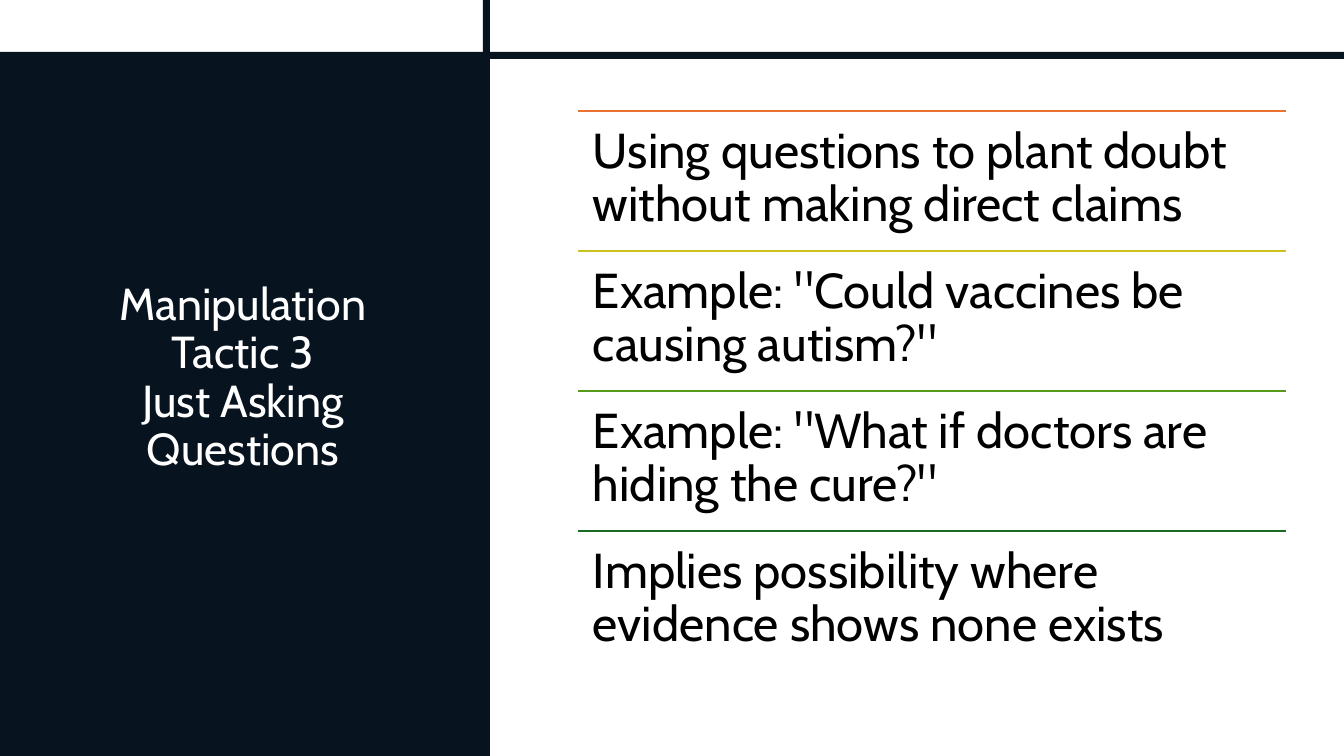
from pptx import Presentation
from pptx.dml.color import RGBColor
from pptx.enum.shapes import MSO_CONNECTOR, MSO_SHAPE
from pptx.enum.text import MSO_ANCHOR, MSO_AUTO_SIZE, PP_ALIGN
from pptx.oxml.ns import qn
from pptx.util import Pt
from lxml.etree import SubElement

SLIDE_WIDTH, SLIDE_HEIGHT = 1344, 756
EMU_PER_PX = 12192000 / SLIDE_WIDTH
TITLE_ONLY = 5

COLORS = {
    "navy": "071420", "white": "FFFFFF", "black": "000000",
    "orange": "E97132", "mustard": "CBC11E", "leaf": "56991D", "forest": "196B24",
}

TITLE_LINES = ["Manipulation Tactic 3", "Just Asking Questions"]
POINTS = [
    ("orange", "Using questions to plant doubt without making direct claims"),
    ("mustard", 'Example: "Could vaccines be causing autism?"'),
    ("leaf", 'Example: "What if doctors are hiding the cure?"'),
    ("forest", "Implies possibility where evidence shows none exists"),
]


def px(*lengths):
    return [round(length * EMU_PER_PX) for length in lengths]


def color(name):
    return RGBColor.from_string(COLORS[name])


def apply(target, **values):
    for attribute, value in values.items():
        setattr(target, attribute, value)


class TacticSlide:
    FONT = "Cabin"
    LINE_SPACING = 0.9

    def __init__(self, slide):
        self.slide = slide
        self.shapes = slide.shapes

    def fill_text(self, frame, lines, size, ink, align, **frame_format):
        apply(frame, word_wrap=True, auto_size=MSO_AUTO_SIZE.NONE, **frame_format)
        paragraph = frame.paragraphs[0]
        apply(paragraph, alignment=align, line_spacing=self.LINE_SPACING)
        for index, line in enumerate(lines):
            if index:
                paragraph.add_line_break()
            run = paragraph.add_run()
            run.text = line
            apply(run.font, name=self.FONT, size=Pt(size))
            run.font.color.rgb = color(ink)

    def block(self, left, top, width, height, fill):
        block = self.shapes.add_shape(MSO_SHAPE.RECTANGLE, *px(left, top, width, height))
        block.shadow.inherit = False
        block.fill.solid()
        block.fill.fore_color.rgb = color(fill)
        block.line.fill.background()

    def title(self, left, top, width, height, lines):
        """Place the title placeholder above everything drawn so far."""
        title = self.shapes.title
        title._element.getparent().append(title._element)
        box = dict(zip(("left", "top", "width", "height"), px(left, top, width, height)))
        apply(title, **box)
        self.fill_text(title.text_frame, lines, 32, "white", PP_ALIGN.CENTER,
                       vertical_anchor=MSO_ANCHOR.MIDDLE)

    def rule(self, left, top, width, stroke):
        rule = self.shapes.add_connector(
            MSO_CONNECTOR.STRAIGHT, *px(left, top, left + width, top))
        rule.line.color.rgb = color(stroke)
        rule.line.width = Pt(1.5)
        SubElement(rule._element.spPr, qn("a:effectLst"))

    def point(self, left, top, width, height, text):
        point = self.shapes.add_textbox(*px(left, top, width, height))
        inset, = px(15)
        margins = {f"margin_{side}": inset for side in ("left", "right", "top", "bottom")}
        self.fill_text(point.text_frame, [text], 35, "black", PP_ALIGN.LEFT,
                       vertical_anchor=MSO_ANCHOR.TOP, **margins)


def main():
    deck = Presentation()
    deck.slide_width, deck.slide_height = px(SLIDE_WIDTH, SLIDE_HEIGHT)
    tactic = TacticSlide(deck.slides.add_slide(deck.slide_layouts[TITLE_ONLY]))

    panel_width, bar, bar_top = 490, 7, 52
    panel_top = bar_top + bar
    tactic.block(0, panel_top, panel_width, SLIDE_HEIGHT - panel_top, "navy")
    tactic.title(66, 85, 354, 587, TITLE_LINES)
    tactic.block(panel_width - bar, 0, bar, SLIDE_HEIGHT, "navy")
    tactic.block(0, bar_top, SLIDE_WIDTH, bar, "navy")

    left, first_top, width, pitch = 578, 111, 708, 140
    for row, (stroke, text) in enumerate(POINTS):
        top = first_top + row * pitch
        tactic.rule(left, top, width, stroke)
        tactic.point(left, top, width, pitch, text)

    deck.save("out.pptx")


if __name__ == "__main__":
    main()
